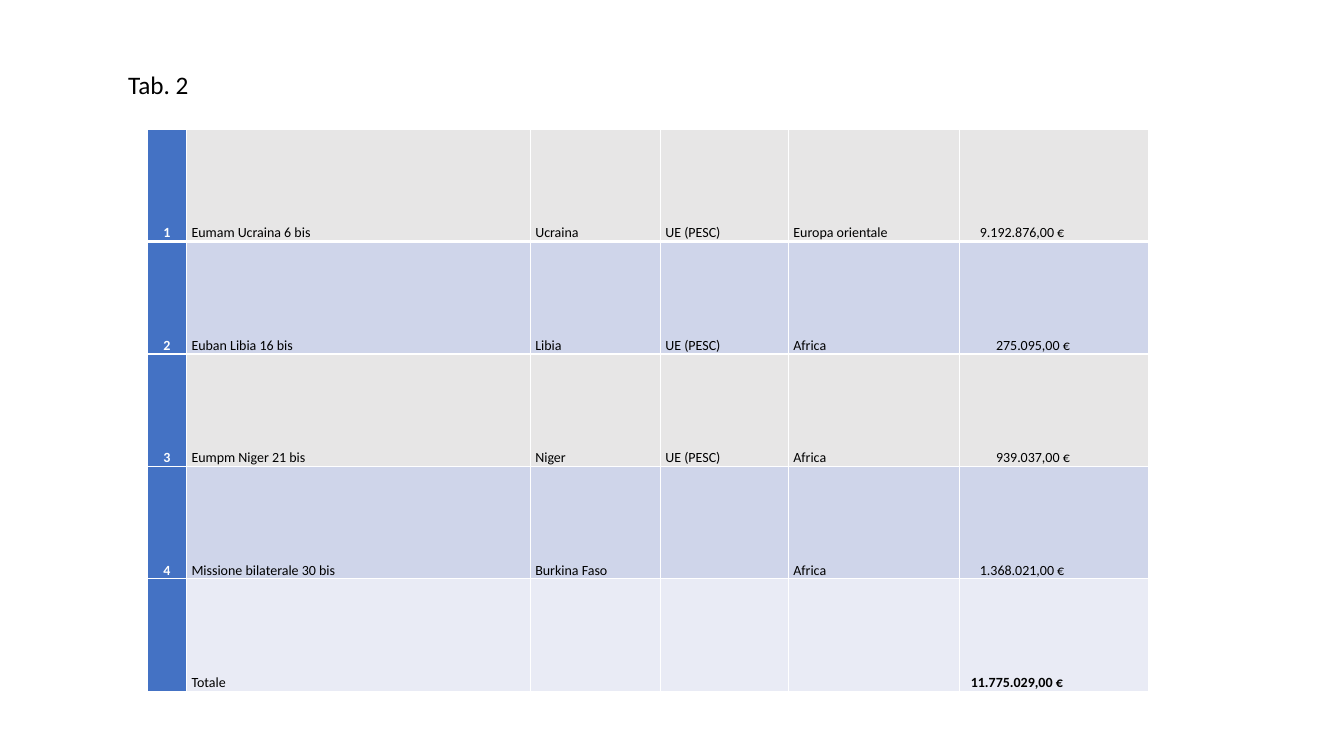
from pptx import Presentation
from pptx.dml.color import RGBColor
from pptx.enum import text
from pptx.oxml import parse_xml
from pptx.oxml.ns import nsdecls
from pptx.util import Inches, Pt

BLACK = RGBColor(0x00, 0x00, 0x00)
WHITE = RGBColor(0xFF, 0xFF, 0xFF)
BLUE = RGBColor(0x44, 0x72, 0xC4)
GREY = RGBColor(0xE7, 0xE6, 0xE6)
LIGHT_BLUE = RGBColor(0xCF, 0xD5, 0xEA)
PALE_BLUE = RGBColor(0xE9, 0xEB, 0xF5)


def write(tf, words, size=10, color=BLACK, bold=False,
          align=text.PP_ALIGN.LEFT, spacing=1.15, after=10):
    p = tf.paragraphs[0]
    p.alignment, p.line_spacing, p.space_after = align, spacing, Pt(after)
    r = p.add_run()
    r.text = words
    r.font.name, r.font.size, r.font.bold = "Calibri", Pt(size), bold
    r.font.color.rgb = color


def set_borders(cell, bottom):
    tcPr = cell._tc.get_or_add_tcPr()
    widths = {"lnL": 1, "lnR": 1, "lnT": 1, "lnB": bottom}
    for i, (side, width) in enumerate(widths.items()):
        tcPr.insert(i, parse_xml(
            f'<a:{side} {nsdecls("a")} w="{Pt(width)}"><a:solidFill>'
            f'<a:srgbClr val="{WHITE}"/></a:solidFill></a:{side}>'))


prs = Presentation()
prs.slide_width, prs.slide_height = Inches(13.33), Inches(7.5)
s = prs.slides.add_slide(prs.slide_layouts[5])

# Title
title = s.shapes.title
title.left, title.top = Inches(1.17), Inches(0.64)
title.width, title.height = Inches(1.26), Inches(0.4)
tf = title.text_frame
tf.auto_size = text.MSO_AUTO_SIZE.SHAPE_TO_FIT_TEXT
tf.vertical_anchor = text.MSO_ANCHOR.TOP
write(tf, "Tab. 2", size=18, spacing=1.0, after=0)

# Table content, with the fill of each row and the indent of its amount
missions = [
    (GREY, 0.15, ["1", "Eumam Ucraina 6 bis", "Ucraina", "UE (PESC)",
                  "Europa orientale", "9.192.876,00 €"]),
    (LIGHT_BLUE, 0.31, ["2", "Euban Libia 16 bis", "Libia", "UE (PESC)",
                        "Africa", "275.095,00 €"]),
    (GREY, 0.31, ["3", "Eumpm Niger 21 bis", "Niger", "UE (PESC)",
                  "Africa", "939.037,00 €"]),
    (LIGHT_BLUE, 0.15, ["4", "Missione bilaterale 30 bis", "Burkina Faso", "",
                        "Africa", "1.368.021,00 €"]),
    (PALE_BLUE, 0.06, ["", "Totale", "", "", "", "11.775.029,00 €"]),
]
col_widths = [0.39, 3.41, 1.29, 1.27, 1.7, 1.87]
amount_col = len(col_widths) - 1
total_row = len(missions) - 1

# Table
table = s.shapes.add_table(len(missions), len(col_widths), Inches(1.46),
                           Inches(1.28), Inches(9.92), Inches(5.58)).table
table.first_row = False
table.first_col = True
for col, width in zip(table.columns, col_widths):
    col.width = Inches(width)

for i, (fill, indent, values) in enumerate(missions):
    for j, value in enumerate(values):
        cell = table.cell(i, j)
        cell.fill.solid()
        cell.fill.fore_color.rgb = BLUE if j == 0 else fill
        cell.vertical_anchor = text.MSO_ANCHOR.BOTTOM
        cell.margin_top = cell.margin_bottom = 0
        cell.margin_right = Inches(0.05)
        cell.margin_left = Inches(0.05 + (indent if j == amount_col else 0))
        set_borders(cell, bottom=3 if i == 0 else 1)
        if not value:
            continue
        if j == 0:
            write(cell.text_frame, value, color=WHITE, bold=True,
                  align=text.PP_ALIGN.CENTER)
        else:
            write(cell.text_frame, value,
                  bold=(i == total_row and j == amount_col))

prs.save("out.pptx")
